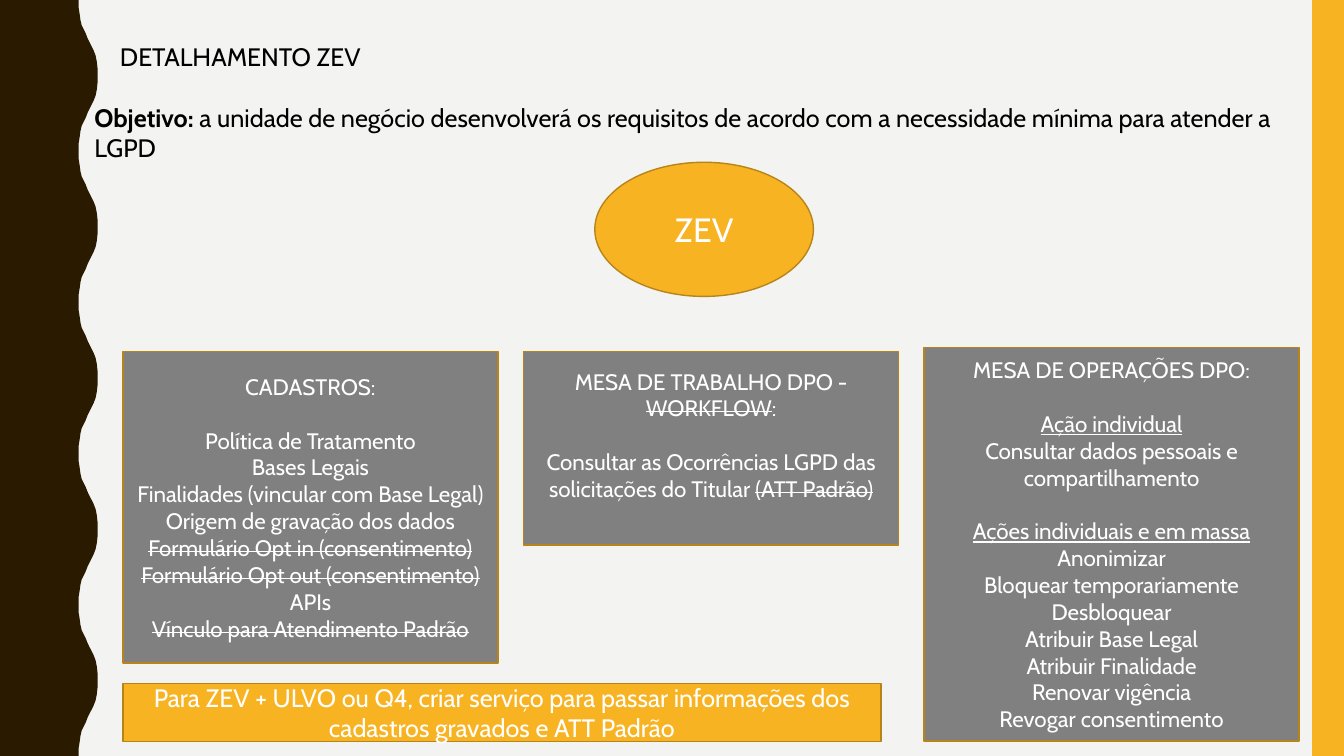
from pptx import Presentation
from pptx.dml.color import RGBColor
from pptx.enum.shapes import MSO_SHAPE
from pptx.enum.text import MSO_ANCHOR, MSO_AUTO_SIZE, PP_ALIGN
from pptx.util import Cm, Pt

COLORS = {
    "background": "F3F3F2",
    "wave": "2A1A00",
    "amber": "F8B323",
    "outline": "B7841A",
    "gray": "808080",
    "white": "FFFFFF",
    "black": "000000",
}
FONT = "Cabin"
SLIDE_WIDTH, SLIDE_HEIGHT = 33.87, 19.05
BLOCK_GAP = 19.2

WAVE_COUNT = 5
WAVE_PERIOD = SLIDE_HEIGHT / WAVE_COUNT
HALF_WAVE = [
    (1.98, 0), (1.98, 0.18), (2.01, 0.36), (2.03, 0.51), (2.06, 0.64),
    (2.11, 0.74), (2.16, 0.84), (2.21, 0.97), (2.26, 1.07), (2.31, 1.17),
    (2.36, 1.27), (2.41, 1.4), (2.44, 1.55), (2.46, 1.73), (2.46, 1.9),
]

CADASTROS = [
    ["CADASTROS:"],
    [
        "Política de Tratamento",
        "Bases Legais",
        "Finalidades (vincular com Base Legal)",
        "Origem de gravação dos dados",
        [("Formulário Opt in (consentimento)", "strike")],
        [("Formulário Opt out (consentimento)", "strike")],
        "APIs",
        [("Vínculo para Atendimento Padrão", "strike")],
    ],
]
MESA_TRABALHO = [
    [[("MESA DE TRABALHO DPO - ", ""), ("WORKFLOW", "strike"), (":", "")]],
    [[
        ("Consultar as Ocorrências LGPD das solicitações do Titular ", ""),
        ("(ATT Padrão)", "strike"),
    ]],
]
MESA_OPERACOES = [
    ["MESA DE OPERAÇÕES DPO:"],
    [
        [("Ação individual", "underline")],
        "Consultar dados pessoais e compartilhamento",
    ],
    [
        [("Ações individuais e em massa", "underline")],
        "Anonimizar",
        "Bloquear temporariamente",
        "Desbloquear",
        "Atribuir Base Legal",
        "Atribuir Finalidade",
        "Renovar vigência",
        "Revogar consentimento",
    ],
]
OBJETIVO = [[[
    ("Objetivo: ", "bold"),
    ("a unidade de negócio desenvolverá os requisitos de acordo com a "
     "necessidade mínima para atender a LGPD", ""),
]]]
SERVICO = [[
    "Para ZEV + ULVO ou Q4, criar serviço para passar informações dos "
    "cadastros gravados e ATT Padrão"
]]


def rgb(color):
    return RGBColor.from_string(COLORS[color])


def paint(shape, fill, outline=None):
    shape.shadow.inherit = False
    shape.fill.solid()
    shape.fill.fore_color.rgb = rgb(fill)
    if outline:
        shape.line.color.rgb = rgb(outline)
        shape.line.width = Pt(1)
    else:
        shape.line.fill.background()


def format_run(run, size, color, style=""):
    run.font.name = FONT
    run.font.size = Pt(size)
    run.font.color.rgb = rgb(color)
    run.font.bold = style == "bold"
    if style == "underline":
        run.font.underline = True
    if style == "strike":
        run._r.get_or_add_rPr().set("strike", "sngStrike")


def write_blocks(frame, blocks, size, color, align):
    frame.word_wrap = True
    paragraph = None
    for block_index, block in enumerate(blocks):
        for line_index, line in enumerate(block):
            paragraph = frame.add_paragraph() if paragraph else frame.paragraphs[0]
            paragraph.alignment = align
            if block_index and not line_index:
                paragraph.space_before = Pt(BLOCK_GAP)
            pieces = [(line, "")] if isinstance(line, str) else line
            for text, style in pieces:
                run = paragraph.add_run()
                run.text = text
                format_run(run, size, color, style)


def add_wave(slide):
    rising = HALF_WAVE[1:]
    falling = [(x, WAVE_PERIOD - y) for x, y in reversed(HALF_WAVE[:-1])]
    crest = [
        (Cm(x), Cm(wave * WAVE_PERIOD + y))
        for wave in range(WAVE_COUNT)
        for x, y in rising + falling
    ]
    builder = slide.shapes.build_freeform(0, 0, scale=1.0)
    builder.add_line_segments(
        [(Cm(HALF_WAVE[0][0]), 0)] + crest + [(0, Cm(SLIDE_HEIGHT))], close=True
    )
    paint(builder.convert_to_shape(), "wave")


def add_side_band(slide):
    band = slide.shapes.add_shape(
        MSO_SHAPE.RECTANGLE, Cm(33.07), 0, Cm(0.8), Cm(SLIDE_HEIGHT)
    )
    paint(band, "amber")


def add_title(slide, text):
    title = slide.shapes.title
    title.left, title.top, title.width, title.height = Cm(2.77), Cm(0.91), Cm(7), Cm(1.02)
    frame = title.text_frame
    frame.text = text
    frame.word_wrap = True
    frame.auto_size = MSO_AUTO_SIZE.NONE
    frame.vertical_anchor = MSO_ANCHOR.TOP
    frame.paragraphs[0].alignment = PP_ALIGN.LEFT
    format_run(frame.paragraphs[0].runs[0], 18, "black")


def add_objective(slide):
    objective = slide.shapes.add_textbox(Cm(2.13), Cm(2.46), Cm(31.62), Cm(1.78))
    write_blocks(objective.text_frame, OBJETIVO, 18, "black", PP_ALIGN.LEFT)


def add_panel(slide, kind, box, fill, blocks, size):
    panel = slide.shapes.add_shape(kind, *(Cm(length) for length in box))
    paint(panel, fill, "outline")
    frame = panel.text_frame
    frame.vertical_anchor = MSO_ANCHOR.MIDDLE
    write_blocks(frame, blocks, size, "white", PP_ALIGN.CENTER)
    return panel


def main():
    deck = Presentation()
    deck.slide_width, deck.slide_height = Cm(SLIDE_WIDTH), Cm(SLIDE_HEIGHT)
    slide = deck.slides.add_slide(deck.slide_layouts[5])
    slide.background.fill.solid()
    slide.background.fill.fore_color.rgb = rgb("background")

    add_wave(slide)
    add_side_band(slide)
    add_title(slide, "DETALHAMENTO ZEV")
    add_panel(slide, MSO_SHAPE.OVAL, (14.99, 4.09, 5.51, 3.38), "amber", [["ZEV"]], 24)
    add_objective(slide)

    rectangle = MSO_SHAPE.RECTANGLE
    add_panel(slide, rectangle, (3.1, 8.86, 9.45, 7.85), "gray", CADASTROS, 16)
    workflow = add_panel(
        slide, rectangle, (13.2, 8.86, 9.45, 4.88), "gray", MESA_TRABALHO, 16
    )
    workflow.text_frame.margin_bottom = Cm(0.81)
    add_panel(slide, rectangle, (23.29, 8.76, 9.45, 9.91), "gray", MESA_OPERACOES, 16)
    add_panel(slide, rectangle, (3.1, 17.22, 19.1, 1.47), "amber", SERVICO, 18)

    deck.save("out.pptx")


if __name__ == "__main__":
    main()
